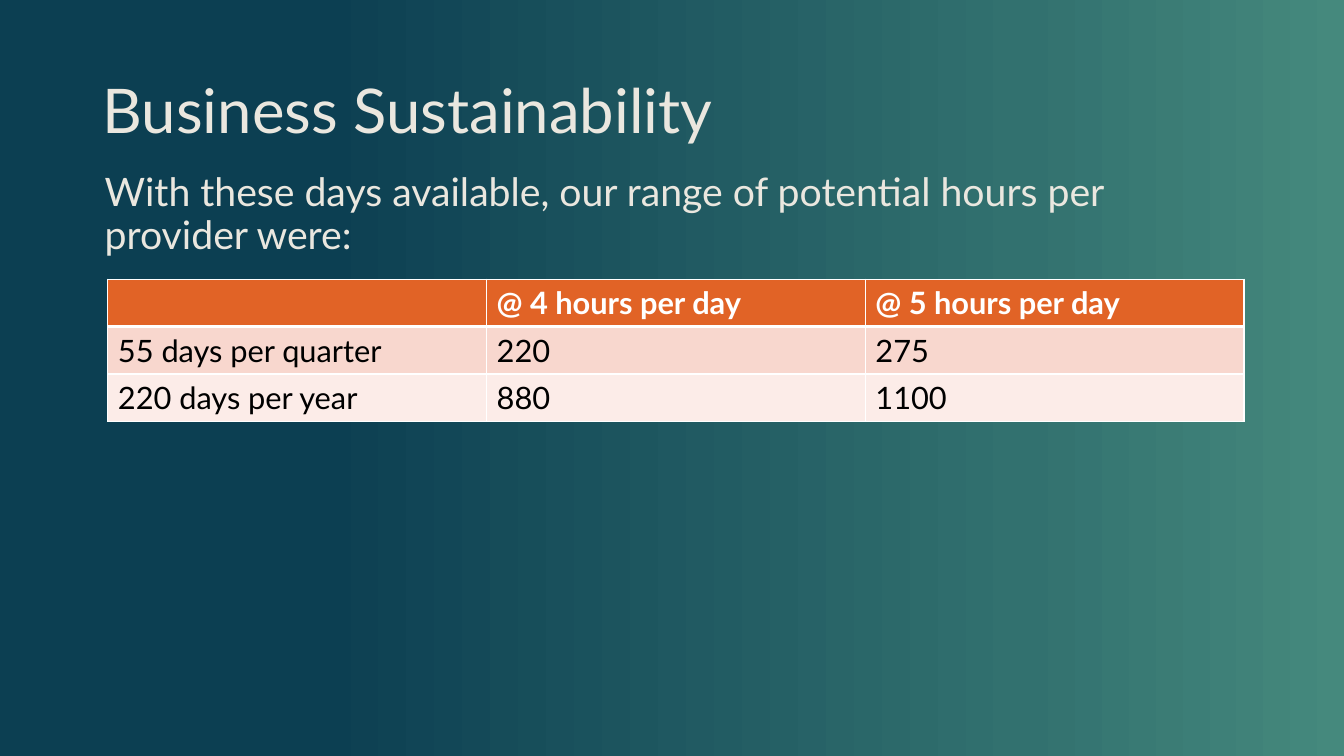
from copy import deepcopy

from lxml.etree import SubElement
from pptx import Presentation
from pptx.dml.color import RGBColor
from pptx.enum.text import MSO_ANCHOR
from pptx.oxml.ns import qn
from pptx.util import Inches, Pt

COLORS = {
    "navy": "0C3F52", "teal": "32716F", "green": "45897D", "cream": "EAE7DF",
    "orange": "E16326", "peach": "F8D7CE", "blush": "FCECE8",
    "white": "FFFFFF", "black": "000000",
}


class SlideBuilder:
    """Draws styled elements on the current slide."""

    font_name = "Lato"

    def __init__(self, page):
        self.page = page

    def color(self, name):
        return RGBColor.from_string(COLORS[name])

    def style(self, font, size, color, bold=False):
        font.name = self.font_name
        font.size = Pt(size)
        font.bold = bold
        font.color.rgb = self.color(color)

    def background(self, stops):
        fill = self.page.background.fill
        fill.gradient()
        fill.gradient_angle = 0
        stop_list = self.page.element.find(".//" + qn("a:gsLst"))
        while len(stop_list) < len(stops):
            stop_list.append(deepcopy(stop_list[0]))
        for stop, (position, color) in zip(fill.gradient_stops, stops):
            stop.position = position
            stop.color.rgb = self.color(color)

    def text(self, words, left, top, width, height, size):
        box = self.page.shapes.add_textbox(
            Inches(left), Inches(top), Inches(width), Inches(height))
        frame = box.text_frame
        frame.word_wrap = True
        frame.vertical_anchor = MSO_ANCHOR.MIDDLE
        frame.text = words
        para = frame.paragraphs[0]
        para.line_spacing = 0.9
        self.style(para.runs[0].font, size, "cream")

    def borders(self, cell, top, bottom):
        properties = cell._tc.get_or_add_tcPr()
        widths = {"a:lnL": 1, "a:lnR": 1, "a:lnT": top, "a:lnB": bottom}
        for index, (tag, width) in enumerate(widths.items()):
            line = SubElement(properties, qn(tag), w=str(Pt(width)))
            fill = SubElement(line, qn("a:solidFill"))
            SubElement(fill, qn("a:srgbClr"), val=COLORS["white"])
            properties.insert(index, line)

    def table(self, rows, fills, left, top, width, row_height, size):
        table = self.page.shapes.add_table(
            len(rows), len(rows[0]), Inches(left), Inches(top),
            Inches(width), Inches(row_height * len(rows))).table
        for row_index, (values, fill) in enumerate(zip(rows, fills)):
            header = row_index == 0
            for column_index, value in enumerate(values):
                cell = table.cell(row_index, column_index)
                cell.text = value
                cell.fill.solid()
                cell.fill.fore_color.rgb = self.color(fill)
                self.borders(cell, 3 if row_index == 1 else 1, 3 if header else 1)
                para = cell.text_frame.paragraphs[0]
                for item in [*para.runs, para]:
                    self.style(item.font, size, "white" if header else "black", header)


def main():
    deck = Presentation()
    deck.slide_width, deck.slide_height = Inches(13.33), Inches(7.5)
    builder = SlideBuilder(deck.slides.add_slide(deck.slide_layouts[6]))
    builder.background([(0.24, "navy"), (0.76, "teal"), (1, "green")])
    builder.text("Business Sustainability", 0.92, 0.4, 11.5, 1.45, 44)
    builder.text(
        "With these days available, our range of potential hours per provider were:",
        0.94, 1.41, 11.5, 1.45, 28)
    builder.table(
        [["", "@ 4 hours per day", "@ 5 hours per day"],
         ["55 days per quarter", "220", "275"],
         ["220 days per year", "880", "1100"]],
        ["orange", "peach", "blush"], 1.07, 2.77, 11.27, 0.47, 22)
    deck.save("out.pptx")


if __name__ == "__main__":
    main()
